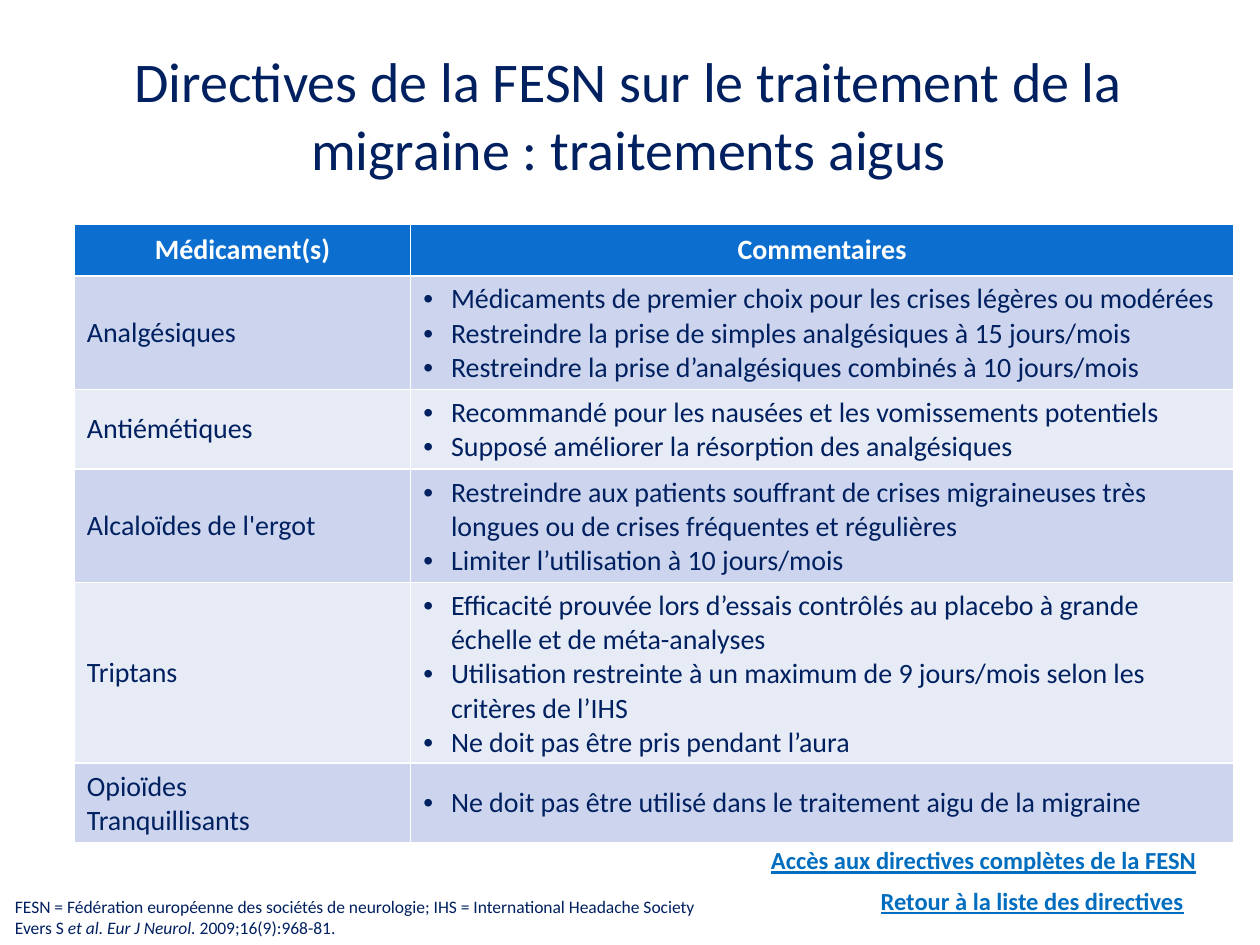
from pptx import Presentation
from pptx.dml.color import RGBColor
from pptx.enum.text import MSO_ANCHOR, MSO_AUTO_SIZE, PP_ALIGN
from pptx.oxml.ns import qn
from pptx.util import Inches, Pt

CENTER, LEFT = PP_ALIGN.CENTER, PP_ALIGN.LEFT
MIDDLE, TOP = MSO_ANCHOR.MIDDLE, MSO_ANCHOR.TOP
FIT_SHAPE, NO_FIT = MSO_AUTO_SIZE.SHAPE_TO_FIT_TEXT, MSO_AUTO_SIZE.NONE

NAVY = RGBColor(0x00, 0x20, 0x60)
LINK_BLUE = RGBColor(0x00, 0x6D, 0xBF)
HEADER_BLUE = RGBColor(0x0C, 0x6F, 0xCF)
BAND_DARK = RGBColor(0xCC, 0xD5, 0xED)
BAND_LIGHT = RGBColor(0xE7, 0xEB, 0xF6)
WHITE = RGBColor(0xFF, 0xFF, 0xFF)
FONT = "Calibri"

# The slide is a grid of 100 columns by 75 rows of square units.
UNIT = Inches(0.1)
GRID_COLUMNS, GRID_ROWS = 100, 75

TITLE_BOX = (4.9, 2.8, 90, 12.5)
TABLE_BOX = (5.9, 17.8, 92, 43.7)
FOOTNOTE_BOX = (0.2, 70.6, 66.1, 4.4)
LINKS = [
    ("Retour à la liste des directives", (68.9, 69.8, 26.2, 3.4)),
    ("Accès aux directives complètes de la FESN", (60.2, 66.6, 36.8, 3.4)),
]

TITLE = "Directives de la FESN sur le traitement de la migraine : traitements aigus"
COLUMN_WIDTHS = (26.7, 65.3)
HEADER_HEIGHT = 4.1
HEADERS = ("Médicament(s)", "Commentaires")
TREATMENTS = [
    (9, ["Analgésiques"], [
        "Médicaments de premier choix pour les crises légères ou modérées",
        "Restreindre la prise de simples analgésiques à 15 jours/mois",
        "Restreindre la prise d’analgésiques combinés à 10 jours/mois",
    ]),
    (6.3, ["Antiémétiques"], [
        "Recommandé pour les nausées et les vomissements potentiels",
        "Supposé améliorer la résorption des analgésiques",
    ]),
    (9, ["Alcaloïdes de l'ergot"], [
        "Restreindre aux patients souffrant de crises migraineuses très longues "
        "ou de crises fréquentes et régulières",
        "Limiter l’utilisation à 10 jours/mois",
    ]),
    (9, ["Triptans"], [
        "Efficacité prouvée lors d’essais contrôlés au placebo à grande échelle "
        "et de méta-analyses",
        "Utilisation restreinte à un maximum de 9 jours/mois selon les critères de l’IHS",
        "Ne doit pas être pris pendant l’aura",
    ]),
    (6.3, ["Opioïdes", "Tranquillisants"], [
        "Ne doit pas être utilisé dans le traitement aigu de la migraine",
    ]),
]
# Each line is a list of (text, italic) runs.
FOOTNOTE = [
    [("FESN = Fédération européenne des sociétés de neurologie; "
      "IHS = International Headache Society", False)],
    [("Evers S ", False), ("et al. Eur J Neurol.", True), (" 2009;16(9):968-81.", False)],
]


def units(value):
    return round(value * UNIT)


def style_paragraph(paragraph, size, color, bold=False, underline=False, alignment=LEFT):
    paragraph.alignment = alignment
    font = paragraph.font
    font.name, font.size, font.bold = FONT, Pt(size), bold
    font.underline = underline
    font.color.rgb = color


def add_bullet(paragraph):
    properties = paragraph._p.get_or_add_pPr()
    indent = Inches(0.22)
    properties.set("marL", str(indent))
    properties.set("indent", str(-indent))
    font = properties.makeelement(qn("a:buFont"), {"typeface": "Arial"})
    bullet = properties.makeelement(qn("a:buChar"), {"char": "•"})
    properties.extend([font, bullet])


def add_text_frame(slide, box, wrap=True, fit=FIT_SHAPE, anchor=TOP):
    frame = slide.shapes.add_textbox(*map(units, box)).text_frame
    frame.word_wrap, frame.auto_size, frame.vertical_anchor = wrap, fit, anchor
    return frame


def add_title(slide, box):
    frame = add_text_frame(slide, box, fit=NO_FIT, anchor=MIDDLE)
    frame.text = TITLE
    style_paragraph(frame.paragraphs[0], 32, NAVY, alignment=CENTER)


def add_footnote(slide, box):
    frame = add_text_frame(slide, box)
    for index, line in enumerate(FOOTNOTE):
        paragraph = frame.add_paragraph() if index else frame.paragraphs[0]
        style_paragraph(paragraph, 10, NAVY)
        for text, italic in line:
            run = paragraph.add_run()
            run.text = text
            run.font.italic = italic


def add_link_label(slide, text, box):
    frame = add_text_frame(slide, box, wrap=False)
    frame.text = text
    style_paragraph(frame.paragraphs[0], 14, LINK_BLUE, bold=True, underline=True)


def fill_cell(cell, lines, fill, color=NAVY, bulleted=False, **style):
    cell.fill.solid()
    cell.fill.fore_color.rgb = fill
    cell.vertical_anchor = MIDDLE
    cell.text_frame.text = "\n".join(lines)
    for paragraph in cell.text_frame.paragraphs:
        if bulleted:
            add_bullet(paragraph)
        style_paragraph(paragraph, 16, color, **style)


def add_treatment_table(slide, box):
    shape = slide.shapes.add_table(len(TREATMENTS) + 1, len(HEADERS), *map(units, box))
    table = shape.table
    for column, width in zip(table.columns, COLUMN_WIDTHS):
        column.width = units(width)

    table.rows[0].height = units(HEADER_HEIGHT)
    for index, header in enumerate(HEADERS):
        fill_cell(table.cell(0, index), [header], HEADER_BLUE, WHITE,
                  bold=True, alignment=CENTER)

    for index, (height, names, comments) in enumerate(TREATMENTS, start=1):
        band = BAND_DARK if index % 2 else BAND_LIGHT
        table.rows[index].height = units(height)
        fill_cell(table.cell(index, 0), names, band)
        fill_cell(table.cell(index, 1), comments, band, bulleted=True)


def main():
    presentation = Presentation()
    presentation.slide_width = units(GRID_COLUMNS)
    presentation.slide_height = units(GRID_ROWS)
    slide = presentation.slides.add_slide(presentation.slide_layouts[6])
    add_footnote(slide, FOOTNOTE_BOX)
    add_treatment_table(slide, TABLE_BOX)
    add_title(slide, TITLE_BOX)
    for text, box in LINKS:
        add_link_label(slide, text, box)
    presentation.save("out.pptx")


if __name__ == "__main__":
    main()
